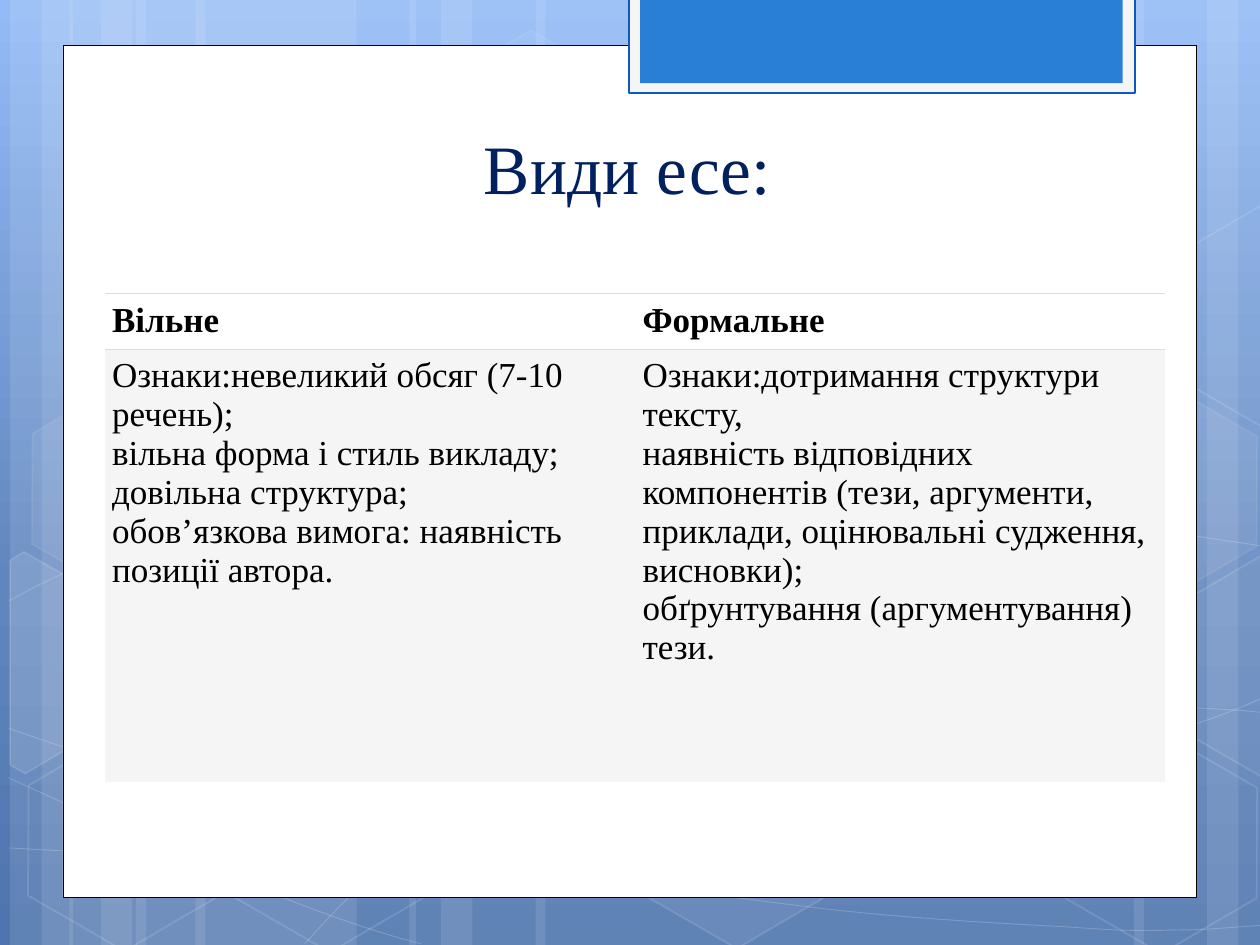
from copy import deepcopy
from dataclasses import dataclass
from itertools import chain

from pptx import Presentation
from pptx.dml.color import RGBColor
from pptx.enum.shapes import MSO_SHAPE as Preset
from pptx.enum.text import MSO_ANCHOR as Anchor, PP_ALIGN as Align
from pptx.oxml.ns import qn
from pptx.oxml.xmlchemy import OxmlElement
from pptx.util import Inches, Pt

FONT = "Times New Roman"
WHITE, PALE, RULE = "FFFFFF", "F5F5F5", "DDDDDD"


@dataclass
class Hexagon:
    left: float
    top: float
    fill_alpha: int
    line_alpha: int


@dataclass
class Panel:
    left: float
    top: float
    width: float
    height: float
    fill: str
    line: str = ""
    weight: float = 0


@dataclass
class Outline:
    points: list[tuple[float, float]]
    fill_alpha: int = 0
    line_alpha: int = 12
    weight: float = 1
    curved: bool = False


STRIPES = [
    (1.08, 1.75), (0.08, 0.5), (0.33, 0.83), (1.55, 1.75), (0.55, 0.5), (0.8, 0.83),
    (7.33, 1.75), (9.58, 0.5), (9, 0.83), (4.25, 3.08), (3.25, 0.5), (3.5, 0.83),
]
WAVES = [
    [(0.07, 6.73), (0.61, 6.76), (1.15, 6.79), (1.9, 6.78), (2.65, 6.77), (3.58, 6.75), (4.58, 6.65),
     (5.58, 6.55), (7, 6.36), (7.92, 6.17), (8.83, 5.98), (9.77, 5.68), (10.07, 5.51)],
    [(0.07, 4.77), (0.36, 4.61), (0.65, 4.46), (1.21, 4.31), (1.78, 4.16), (2.59, 3.94), (3.47, 3.87),
     (4.36, 3.8), (5.44, 3.79), (6.54, 3.87), (7.64, 3.95), (9.47, 4.26), (10.07, 4.34)],
    [(0.06, 6.17), (1.27, 6.72), (2.47, 7.27), (3.34, 7.49)],
    [(0.07, 5.78), (0.38, 5.89), (0.7, 6), (1.28, 6.16), (1.86, 6.31), (2.73, 6.56), (3.57, 6.73),
     (4.4, 6.9), (5.45, 7.08), (6.28, 7.18), (7.11, 7.29), (8, 7.33), (8.53, 7.36),
     (9.05, 7.4), (9.19, 7.38), (9.45, 7.38), (9.71, 7.37), (9.89, 7.35), (10.07, 7.34)],
    [(2.42, 7.49), (2.6, 7.29), (2.78, 7.09), (3.02, 6.91), (3.26, 6.73), (3.6, 6.53), (3.88, 6.39),
     (4.16, 6.25), (4.33, 6.19), (4.7, 6.09), (5.06, 5.99), (5.73, 5.85), (6.08, 5.78),
     (6.44, 5.71), (6.49, 5.71), (6.8, 5.69), (7.11, 5.66), (7.6, 5.63), (7.94, 5.62),
     (8.29, 5.61), (8.86, 5.62), (8.86, 5.62), (9.08, 5.62), (9.31, 5.62), (9.53, 5.62),
     (9.71, 5.63), (9.88, 5.64), (9.97, 5.65), (10.06, 5.66), (10.03, 5.65), (10.06, 5.66)],
]
HEXAGONS = [
    Hexagon(3.34, 0.36, 4, 8), Hexagon(4.97, 5.89, 6, 12), Hexagon(0.11, 5.91, 0, 12),
    Hexagon(0.14, 3.12, 7, 8), Hexagon(1.74, 5.92, 0, 12), Hexagon(7.53, 4.53, 10, 12),
    Hexagon(8.34, 5.93, 0, 12), Hexagon(8.34, 3.14, 7, 8),
]
CUT_HEXAGONS = [
    Outline([(0.08, 4.45), (0.19, 4.38), (0.96, 4.82), (0.95, 5.7), (0.2, 6.14), (0.08, 6.07)], 10),
    Outline([(9.26, 4.85), (10.01, 4.41), (10.09, 4.46), (10.09, 6.13), (10.02, 6.17), (9.26, 5.73)], 4),
    Outline([(9.26, 2.07), (10.01, 1.63), (10.1, 1.68), (10.09, 3.35), (10.02, 3.39), (9.26, 2.95)]),
]
PANELS = [
    Panel(0.5, 0.36, 9, 6.76, WHITE, "000000", 0.5),
    Panel(4.99, -0.02, 4.02, 0.76, PALE, "0E58C4", 1.25),
    Panel(5.08, -0.02, 3.83, 0.68, "297FD5"),
]
ROWS = [
    [["Вільне"], ["Формальне"]],
    [
        ["Ознаки:невеликий обсяг (7-10 речень);", "вільна форма і стиль викладу;",
         "довільна структура;", "обов’язкова вимога: наявність позиції автора."],
        ["Ознаки:дотримання структури тексту,",
         "наявність відповідних компонентів (тези, аргументи, приклади, оцінювальні судження, висновки);",
         "обґрунтування (аргументування) тези."],
    ],
]


def paint(fill, color: str, alpha: int = 100) -> None:
    if not color or not alpha:
        fill.background()
        return
    fill.solid()
    fill.fore_color.rgb = RGBColor.from_string(color)
    if alpha < 100:
        for tint in fill._xPr.iter(qn("a:srgbClr")):
            opacity = OxmlElement("a:alpha")
            opacity.set("val", str(alpha * 1000))
            tint.append(opacity)


def style(shape, fill: str, fill_alpha: int = 100, line: str = "", weight: float = 0, line_alpha: int = 100) -> None:
    shape.shadow.inherit = False
    paint(shape.fill, fill, fill_alpha)
    if line:
        shape.line.width = Pt(weight)
    paint(shape.line.fill, line, line_alpha)


def draw_background(page) -> None:
    fill = page.background.fill
    fill.gradient()
    fill.gradient_angle = 270
    stop_list = next(page.element.iter(qn("a:gsLst")))
    stop_list.insert(1, deepcopy(stop_list[0]))
    for stop, (place, color) in zip(fill.gradient_stops, [(0, "93BBF6"), (0.62, "6186BE"), (1, "4F75AE")]):
        stop.position = place
        stop.color.rgb = RGBColor.from_string(color)


def draw_panel(page, panel: Panel, alpha: int = 100) -> None:
    box = page.shapes.add_shape(
        Preset.RECTANGLE, *map(Inches, (panel.left, panel.top, panel.width, panel.height)))
    style(box, panel.fill, alpha, panel.line, panel.weight)


def draw_hexagon(page, hexagon: Hexagon) -> None:
    shape = page.shapes.add_shape(
        Preset.HEXAGON, *map(Inches, (hexagon.left, hexagon.top, 1.75, 1.52)))
    shape.adjustments[0] = 0.285
    shape.rotation = 30
    style(shape, WHITE, hexagon.fill_alpha, WHITE, 1, hexagon.line_alpha)


def draw_outline(page, outline: Outline) -> None:
    start, *others = [(Inches(x), Inches(y)) for x, y in outline.points]
    builder = page.shapes.build_freeform(*start)
    builder.add_line_segments(others, close=not outline.curved)
    shape = builder.convert_to_shape()
    style(shape, WHITE, outline.fill_alpha, WHITE, outline.weight, outline.line_alpha)
    if outline.curved:
        segments = list(shape.element.iter(qn("a:lnTo")))
        for first in range(0, len(segments), 3):
            curve = OxmlElement("a:cubicBezTo")
            segments[first].addprevious(curve)
            for segment in segments[first:first + 3]:
                curve.append(segment[0])
                segment.getparent().remove(segment)


def write_title(page) -> None:
    title = page.shapes.title
    title.left, title.top, title.width, title.height = map(Inches, (1.14, 1.12, 7.68, 0.58))
    title.element.getparent().append(title.element)
    title.text_frame.vertical_anchor = Anchor.BOTTOM
    title.text_frame.text = "Види есе:"
    para = title.text_frame.paragraphs[0]
    para.alignment = Align.CENTER
    para.font.name, para.font.size = FONT, Pt(39.6)
    para.font.color.rgb = RGBColor.from_string("002060")


def set_borders(cell, ruled: tuple[str, ...]) -> None:
    properties = cell._tc.get_or_add_tcPr()
    for index, side in enumerate(("L", "R", "T", "B")):
        border = OxmlElement(f"a:ln{side}")
        if side in ruled:
            border.set("w", str(Pt(0.6)))
            color = OxmlElement("a:srgbClr")
            color.set("val", RULE)
            fill = OxmlElement("a:solidFill")
            fill.append(color)
        else:
            fill = OxmlElement("a:noFill")
        border.append(fill)
        properties.insert(index, border)


def fill_cell(cell, lines: list[str], header: bool) -> None:
    cell.margin_left = cell.margin_right = cell.margin_top = cell.margin_bottom = Inches(0.06)
    paint(cell.fill, WHITE if header else PALE)
    set_borders(cell, ("T", "B") if header else ("T",))
    cell.text_frame.text = "\n".join(lines)
    for para in cell.text_frame.paragraphs:
        para.font.name, para.font.size, para.font.bold = FONT, Pt(20), header
        para.font.color.rgb = RGBColor.from_string("000000")


def draw_table(page) -> None:
    table = page.shapes.add_table(2, 2, *map(Inches, (0.83, 2.33, 8.42, 3.88))).table
    table.first_row = table.horz_banding = False
    table.rows[0].height, table.rows[1].height = Inches(0.44), Inches(3.44)
    for index, (cell, lines) in enumerate(zip(table.iter_cells(), chain(*ROWS))):
        fill_cell(cell, lines, index < 2)


def main() -> None:
    deck = Presentation()
    deck.slide_width, deck.slide_height = Inches(10), Inches(7.5)
    page = deck.slides.add_slide(deck.slide_layouts[5])
    draw_background(page)
    for left, width in STRIPES:
        draw_panel(page, Panel(left, 0, width, 7.5, WHITE), 10)
    for points in WAVES:
        draw_outline(page, Outline(points, 0, 20, 0.5, True))
    for hexagon in HEXAGONS:
        draw_hexagon(page, hexagon)
    for outline in CUT_HEXAGONS:
        draw_outline(page, outline)
    for panel in PANELS:
        draw_panel(page, panel)
    write_title(page)
    draw_table(page)
    deck.save("out.pptx")


if __name__ == "__main__":
    main()
